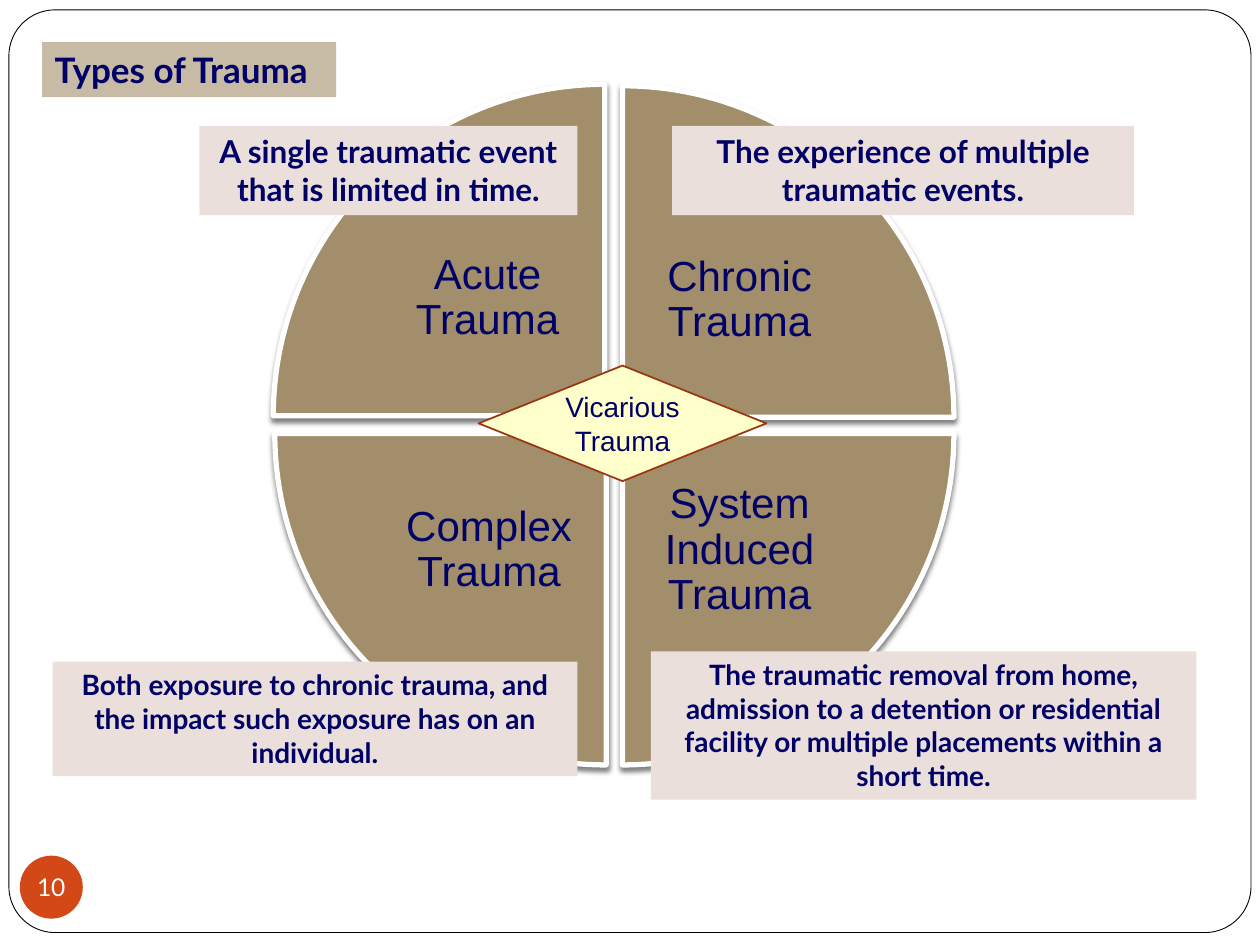
from lxml import etree
from pptx import Presentation
from pptx import util as u
from pptx.dml.color import RGBColor
from pptx.enum import shapes, text
from pptx.oxml.ns import qn

NAVY = "000066"
WEDGE, LABEL = 6.68, 4.72


def colour(value):
    return RGBColor.from_string(value)


class Sketch:
    """Holds the style and the current page; lengths are in centimetres."""

    def __init__(self, page):
        self.page = page

    def shape(self, kind, box, fill, line=None, width=1):
        item = self.page.shapes.add_shape(kind, *map(u.Cm, box))
        item.shadow.inherit = False
        item.fill.solid()
        item.fill.fore_color.rgb = colour(fill)
        if line:
            item.line.color.rgb = colour(line)
            item.line.width = u.Pt(width)
        else:
            item.line.fill.background()
        return item

    def set_words(self, item, words, size, font="Lato", ink=NAVY, bold=False,
                  align=text.PP_ALIGN.CENTER, anchor=text.MSO_ANCHOR.MIDDLE,
                  inset=None, wrap=True):
        frame = item.text_frame
        frame.text = words
        frame.word_wrap = wrap
        frame.vertical_anchor = anchor
        if inset is not None:
            frame.margin_left = frame.margin_right = u.Cm(inset)
            frame.margin_top = frame.margin_bottom = u.Cm(inset)
        para = frame.paragraphs[0]
        para.alignment = align
        span = para.runs[0]
        span.font.name = font
        span.font.size = u.Pt(size)
        span.font.bold = bold
        span.font.color.rgb = colour(ink)
        return frame

    def wedge(self, left, top, turn):
        item = self.shape(shapes.MSO_SHAPE.PIE_WEDGE, (left, top, WEDGE, WEDGE),
                          "A28E6A", "FFFFFF", 3)
        item.rotation = turn
        self.cast_shadow(item)

    def cast_shadow(self, item):
        """Add a soft half-transparent shadow straight below the shape."""
        effects = item._element.spPr.find(qn("a:effectLst"))
        shadow = etree.SubElement(effects, qn("a:outerShdw"), blurRad=str(u.Pt(3)),
                                  dist=str(u.Pt(2)), dir="5400000", rotWithShape="0")
        tint = etree.SubElement(shadow, qn("a:srgbClr"), val="000000")
        etree.SubElement(tint, qn("a:alpha"), val="50000")

    def label(self, left, top, words):
        box = self.page.shapes.add_textbox(*map(u.Cm, (left, top, LABEL, LABEL)))
        frame = self.set_words(box, words, 24, "Arial", inset=0.48)
        frame.paragraphs[0].line_spacing = 0.9

    def note(self, box, words, size, fill="EBDFDB", align=text.PP_ALIGN.CENTER):
        item = self.shape(shapes.MSO_SHAPE.RECTANGLE, box, fill)
        frame = self.set_words(item, words, size, bold=True, align=align,
                               anchor=text.MSO_ANCHOR.TOP)
        frame.auto_size = text.MSO_AUTO_SIZE.SHAPE_TO_FIT_TEXT


def main():
    deck = Presentation()
    deck.slide_width, deck.slide_height = u.Cm(25.4), u.Cm(19.05)
    sketch = Sketch(deck.slides.add_slide(deck.slide_layouts[6]))

    border = sketch.shape(shapes.MSO_SHAPE.ROUNDED_RECTANGLE,
                          (0.18, 0.2, 25.04, 18.6), "FFFFFF", "000000", 0.5)
    border.adjustments[0] = 0.05

    quarters = [  # left, top, rotation, words
        (5.51, 1.7, 0, "Acute Trauma"),
        (12.55, 1.73, 90, "Chronic Trauma"),
        (12.55, 8.74, 180, "System Induced Trauma"),
        (5.54, 8.74, 270, "Complex Trauma"),
    ]
    inward = WEDGE - LABEL  # labels sit in the corner nearest the centre
    for left, top, turn, words in quarters:
        sketch.wedge(left, top, turn)
        sketch.label(left + inward * (turn in (0, 270)),
                     top + inward * (turn in (0, 90)), words)

    centre = sketch.shape(shapes.MSO_SHAPE.FLOWCHART_DECISION,
                          (9.65, 7.37, 5.8, 2.33), "FFFFCC", "9C3511")
    sketch.set_words(centre, "Vicarious Trauma", 16, "Arial")

    notes = [
        ((13.55, 2.54, 9.31, 1.8), "The experience of multiple traumatic events.", 18),
        ((13.12, 13.13, 11, 2.99),
         "The traumatic removal from home, admission to a detention or residential "
         "facility or multiple placements within a short time.", 16),
        ((1.06, 13.34, 10.58, 2.31),
         "Both exposure to chronic trauma, and the impact such exposure has on an "
         "individual.", 16),
        ((4.02, 2.54, 7.62, 1.8), "A single traumatic event that is limited in time.", 18),
    ]
    for box, words, size in notes:
        sketch.note(box, words, size)
    sketch.note((0.85, 0.85, 5.93, 1.11), "Types of Trauma", 20, "C7BBA6",
                text.PP_ALIGN.LEFT)

    badge = sketch.shape(shapes.MSO_SHAPE.OVAL, (0.4, 17.25, 1.27, 1.27), "D34817")
    sketch.set_words(badge, "10", 14, ink="FFFFFF", inset=0, wrap=False)
    deck.save("out.pptx")


if __name__ == "__main__":
    main()
